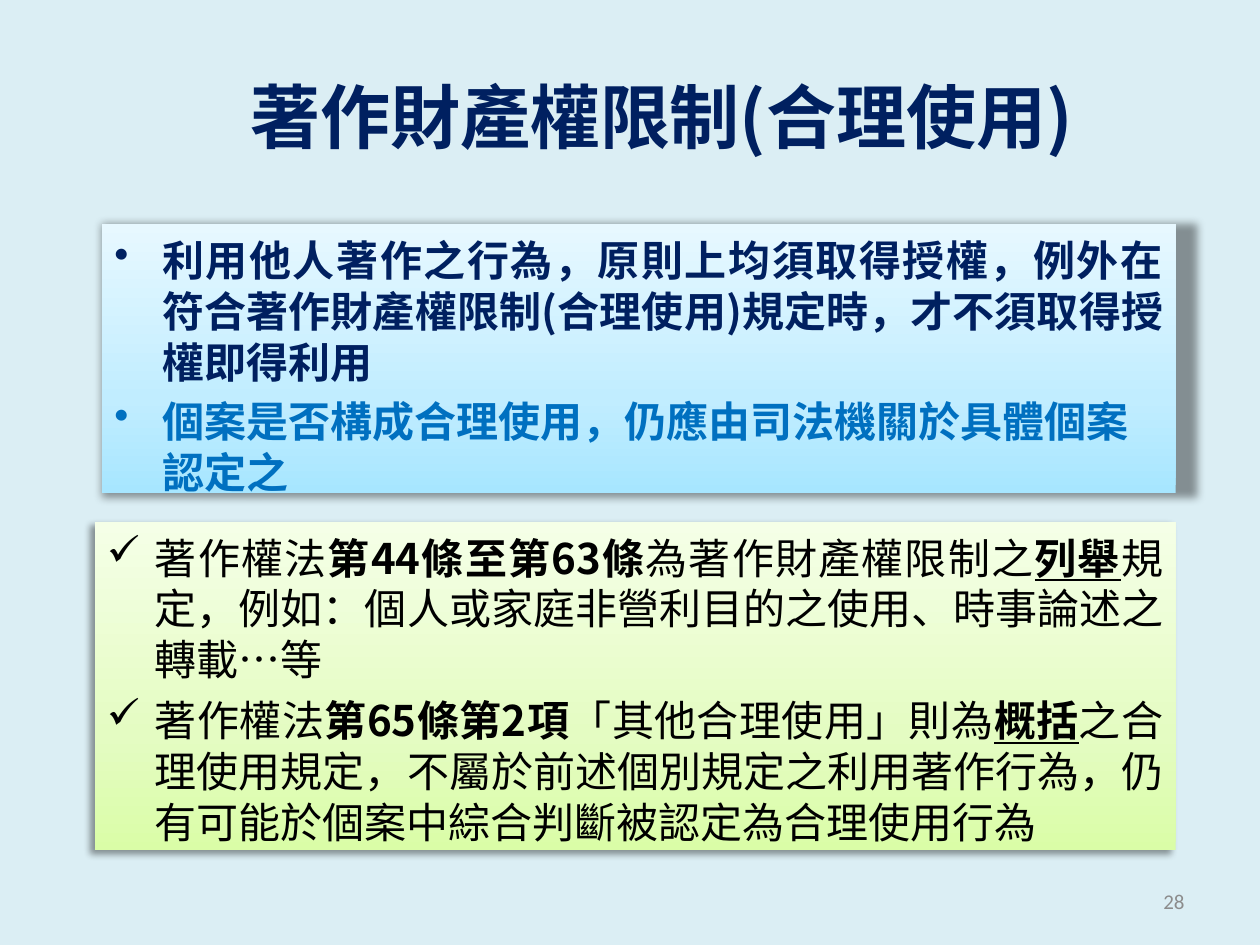
import dataclasses

import lxml.etree
import pptx
import pptx.dml.color
import pptx.enum.shapes
import pptx.enum.text
import pptx.oxml.ns
import pptx.util

Inches = pptx.util.Inches
Pt = pptx.util.Pt
qn = pptx.oxml.ns.qn
Align = pptx.enum.text.PP_ALIGN
Anchor = pptx.enum.text.MSO_ANCHOR


@dataclasses.dataclass(frozen=True)
class Theme:
    """Colours, fonts and type sizes of the slide."""
    background: str = "DBEEF4"
    navy: str = "002060"
    blue: str = "0070C0"
    black: str = "000000"
    grey: str = "8C8C8C"
    sky: tuple = ((0, "A7E6FF"), (35, "C1EDFF"), (100, "E7F8FF"))
    lime: tuple = ((0, "DAFDA7"), (35, "E4FCC2"), (100, "F5FFE7"))
    cjk: str = "Noto Sans CJK SC"
    latin: str = "Calibri"
    title_size: int = 40
    body_size: int = 24
    number_size: int = 12
    line_height: int = 29


THEME = Theme()
PLAIN = {}
BOLD = {"bold": True}
KEY = {"bold": True, "underline": True}

PRINCIPLES = [
    ([("利用他人著作之行為，原則上均須取得授權，例外在符合著作財產權限制(合理使用)規定時，才不須取得授權即得利用", BOLD)],
     THEME.navy, Align.JUSTIFY),
    ([("個案是否構成合理使用，仍應由司法機關於具體個案認定之", BOLD)], THEME.blue, Align.LEFT),
]
ARTICLES = [
    ([("著作權法", PLAIN), ("第44條至第63條", BOLD), ("為著作財產權限制之", PLAIN), ("列舉", KEY),
      ("規定，例如：個人或家庭非營利目的之使用、時事論述之轉載…等", PLAIN)],
     THEME.black, Align.JUSTIFY),
    ([("著作權法", PLAIN), ("第65條第2項", BOLD), ("「其他合理使用」則為", PLAIN), ("概括", KEY),
      ("之合理使用規定，不屬於前述個別規定之利用著作行為，仍有可能於個案中綜合判斷被認定為合理使用行為", PLAIN)],
     THEME.black, Align.JUSTIFY),
]


def add_element(parent, tag, **attributes):
    """Append a DrawingML element and return it."""
    values = {name: str(value) for name, value in attributes.items()}
    return lxml.etree.SubElement(parent, qn(tag), values)


def add_run(paragraph, text, size, color, typeface, style):
    """Add a run in one typeface for Latin and East Asian text."""
    run = paragraph.add_run()
    run.text = text
    for name, value in {"size": Pt(size), "name": typeface, **style}.items():
        setattr(run.font, name, value)
    run.font.color.rgb = pptx.dml.color.RGBColor.from_string(color)
    add_element(run.font._element, "a:ea", typeface=typeface)


def add_label(slide, bounds, text, alignment, size, color, typeface, style):
    """Add a one-line text box centred vertically."""
    frame = slide.shapes.add_textbox(*map(Inches, bounds)).text_frame
    for name, value in {"word_wrap": True, "vertical_anchor": Anchor.MIDDLE}.items():
        setattr(frame, name, value)
    paragraph = frame.paragraphs[0]
    paragraph.alignment = alignment
    add_run(paragraph, text, size, color, typeface, style)


def add_gradient(panel, stops):
    """Fill a panel with a gradient that rises from the bottom edge."""
    properties = panel._element.spPr
    gradient = add_element(properties, "a:gradFill", rotWithShape=1)
    stop_list = add_element(gradient, "a:gsLst")
    for position, color in stops:
        stop = add_element(stop_list, "a:gs", pos=position * 1000)
        add_element(stop, "a:srgbClr", val=color)
    add_element(gradient, "a:lin", ang=270 * 60000, scaled=0)
    properties.find(qn("a:prstGeom")).addnext(gradient)


def add_shadow(panel, shadow):
    """Give a panel a soft black outer shadow."""
    panel.shadow.inherit = False
    effects = panel._element.spPr.find(qn("a:effectLst"))
    outer = add_element(effects, "a:outerShdw", **shadow, rotWithShape=0)
    color = add_element(outer, "a:srgbClr", val=THEME.black)
    add_element(color, "a:alpha", val=40000)


def add_panel(slide, bounds, stops, shadow, bullet, space, items):
    """Add a gradient panel holding a bulleted list."""
    panel = slide.shapes.add_shape(pptx.enum.shapes.MSO_SHAPE.RECTANGLE, *map(Inches, bounds))
    panel.line.fill.background()
    add_gradient(panel, stops)
    add_shadow(panel, shadow)
    frame = panel.text_frame
    layout = {"word_wrap": True, "vertical_anchor": Anchor.TOP, "margin_top": Inches(0.08)}
    for name, value in layout.items():
        setattr(frame, name, value)
    for index, (runs, color, alignment) in enumerate(items):
        paragraph = frame.add_paragraph() if index else frame.paragraphs[0]
        properties = paragraph._p.get_or_add_pPr()
        for name, value in {"marL": Inches(0.38), "indent": Inches(-0.38)}.items():
            properties.set(name, str(value))
        add_element(properties, "a:buChar", char=bullet)
        spacing = {"alignment": alignment, "line_spacing": Pt(THEME.line_height),
                   "space_before": Pt(space if index else 0)}
        for name, value in spacing.items():
            setattr(paragraph, name, value)
        for text, style in runs:
            add_run(paragraph, text, THEME.body_size, color, THEME.cjk, style)


def main():
    """Build the slide and save it."""
    deck = pptx.Presentation()
    for name, value in {"slide_width": Inches(10), "slide_height": Inches(7.5)}.items():
        setattr(deck, name, value)
    slide = deck.slides.add_slide(deck.slide_layouts[6])
    backdrop = slide.background.fill
    backdrop.solid()
    backdrop.fore_color.rgb = pptx.dml.color.RGBColor.from_string(THEME.background)

    add_label(slide, (0.75, 0.29, 9, 1.25), "著作財產權限制(合理使用)", Align.CENTER,
              THEME.title_size, THEME.navy, THEME.cjk, BOLD)
    enlarged = {"blurRad": Pt(5), "dist": 0, "dir": 0, "sx": 102000, "sy": 102000, "algn": "tl"}
    add_panel(slide, (0.81, 1.78, 8.52, 2.13), THEME.sky, enlarged, "•", 4.8, PRINCIPLES)
    lower_left = {"blurRad": Pt(4), "dist": Pt(3), "dir": 135 * 60000, "algn": "tr"}
    add_panel(slide, (0.75, 4.14, 8.58, 2.61), THEME.lime, lower_left, "✓", 6, ARTICLES)
    add_label(slide, (7.17, 6.95, 2.33, 0.4), "28", Align.RIGHT,
              THEME.number_size, THEME.grey, THEME.latin, PLAIN)
    deck.save("out.pptx")


if __name__ == "__main__":
    main()
